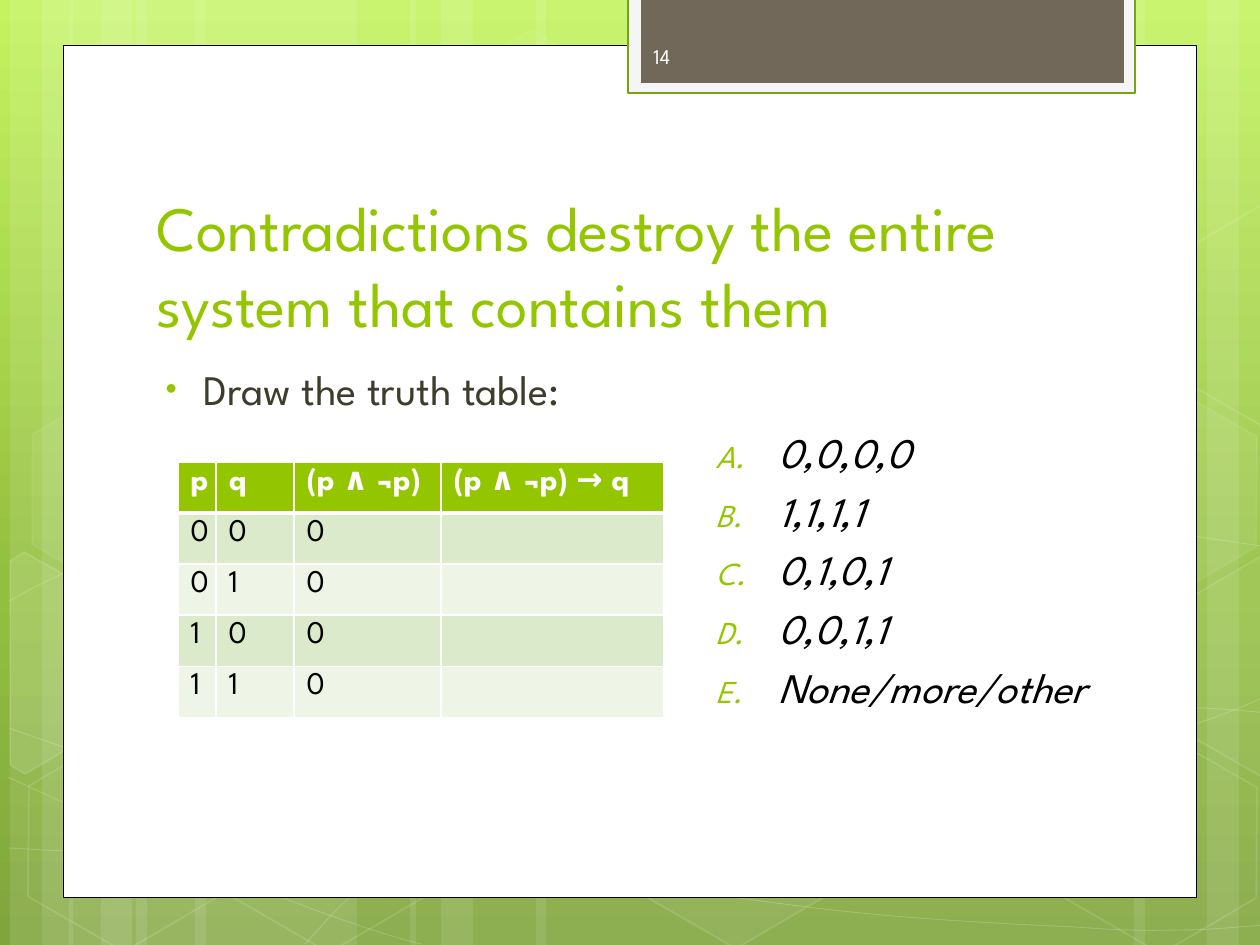
import copy
import math

import lxml.etree
import pptx
import pptx.dml.color
import pptx.enum.shapes
import pptx.enum.text
import pptx.oxml.ns
import pptx.util

PX = 914400 / 126
FONT = "League Spartan"
KIND = pptx.enum.shapes.MSO_SHAPE
ANCHOR = pptx.enum.text.MSO_ANCHOR
COLORS = {
    "white": "FFFFFF", "black": "000000", "green": "94C600", "edge": "74A510",
    "frame": "F5F5F5", "brown": "71685A", "ink": "3E3D2D", "number": "FEFEFE",
    "odd": "DCEACC", "even": "EEF5E7",
    "top": "C3F35F", "middle": "93BF3F", "base": "81A53E",
}

BANDS = [(136, 221), (10, 63), (42, 105), (195, 221), (69, 63), (101, 105),
         (924, 221), (1207, 63), (1134, 105), (536, 388), (410, 63), (441, 105)]

# Each curve is a start point, then two control points and an end per segment.
CURVES = [
    [(9, 848), (77, 852), (145, 856), (239, 854), (334, 853), (451, 851), (577, 838),
     (703, 825), (882, 801), (998, 777), (1113, 753), (1231, 716), (1269, 694)],
    [(9, 601), (45, 581), (82, 562), (152, 543), (224, 524), (326, 496), (437, 488),
     (549, 479), (685, 478), (824, 488), (963, 498), (1193, 537), (1269, 547)],
    [(8, 777), (160, 847), (311, 916), (421, 944)],
    [(9, 728), (48, 742), (88, 756), (161, 776), (234, 795), (344, 827), (450, 848),
     (554, 869), (687, 892), (791, 905), (896, 919), (1008, 924), (1075, 927),
     (1140, 932), (1158, 930), (1191, 930), (1223, 929), (1246, 926), (1269, 925)],
    [(305, 944), (328, 919), (350, 893), (381, 871), (411, 848), (454, 823), (489, 805),
     (524, 788), (546, 780), (592, 767), (638, 754), (722, 737), (766, 728),
     (811, 719), (818, 719), (857, 717), (896, 713), (958, 708), (1000, 708),
     (1045, 707), (1116, 708), (1116, 708), (1144, 708), (1173, 708), (1201, 708),
     (1223, 709), (1245, 711), (1268, 713)],
]

# Left, top, fill opacity and line opacity in percent.
HEXES = [(421, 45, 4, 8), (626, 742, 6, 12), (14, 745, 0, 12), (18, 393, 7, 8),
         (219, 746, 0, 12), (949, 571, 10, 12), (1051, 747, 0, 12), (1051, 396, 7, 8)]
TILT = 30
LEFT_CUT = [(10, 561), (24, 552), (121, 607), (120, 718), (25, 774), (10, 765)]
RIGHT_CUT = [(1167, 611), (1261, 556), (1271, 562), (1271, 772), (1263, 777), (1167, 722)]

HEADS = ["p", "q", "(p ∧ ¬p)", "(p ∧ ¬p) → q"]
ROWS = [[p, q, "0", ""] for p in "01" for q in "01"]
WIDTHS = [38, 78, 147, 223]
ANSWERS = ["0,0,0,0", "1,1,1,1", "0,1,0,1", "0,0,1,1", "None/more/other"]


def px(*sizes):
    return [pptx.util.Emu(round(size * PX)) for size in sizes]


def rgb(name):
    return pptx.dml.color.RGBColor.from_string(COLORS[name])


def node(parent, tag, **attrs):
    return lxml.etree.SubElement(parent, pptx.oxml.ns.qn("a:" + tag), attrs)


def fade(shape, part, alpha):
    """Set the opacity of a shape's solidFill or ln part, in percent."""
    host = shape.element.spPr.find(pptx.oxml.ns.qn("a:" + part))
    color = next(host.iter(pptx.oxml.ns.qn("a:srgbClr")))
    if alpha < 100:
        node(color, "alpha", val=str(alpha * 1000))


def paint(shape, fill=None, alpha=100, line=None, wide=1, sheer=100):
    shape.shadow.inherit = False
    if fill and alpha:
        shape.fill.solid()
        shape.fill.fore_color.rgb = rgb(fill)
        fade(shape, "solidFill", alpha)
    else:
        shape.fill.background()
    if line:
        shape.line.color.rgb = rgb(line)
        shape.line.width = pptx.util.Pt(wide)
        fade(shape, "ln", sheer)
    else:
        shape.line.fill.background()


def block(slide, kind, box, **look):
    shape = slide.shapes.add_shape(kind, *px(*box))
    paint(shape, **look)
    return shape


def outline(slide, points, closed, **look):
    start, *rest = [px(*point) for point in points]
    pen = slide.shapes.build_freeform(*start)
    pen.add_line_segments(rest, close=closed)
    shape = pen.convert_to_shape()
    paint(shape, **look)
    return shape


def bend(shape):
    """Turn every three straight segments into one cubic curve."""
    steps = list(shape.element.iter(pptx.oxml.ns.qn("a:lnTo")))
    for i in range(0, len(steps), 3):
        cubic = node(steps[i].getparent(), "cubicBezTo")
        for step in steps[i:i + 3]:
            cubic.append(step[0])
            step.getparent().remove(step)


def turn(points, mid):
    """Turn points back by the tilt, around a middle point."""
    cos, sin = math.cos(math.radians(TILT)), math.sin(math.radians(TILT))
    moved = [(x - mid[0], y - mid[1]) for x, y in points]
    return [(mid[0] + x * cos + y * sin, mid[1] - x * sin + y * cos) for x, y in moved]


def style(text, size, color, bold=False, italic=False):
    for para in text.paragraphs:
        for run in para.runs:
            run.font.name = FONT
            run.font.size = pptx.util.Pt(size)
            run.font.color.rgb = rgb(color)
            run.font.bold = bold
            run.font.italic = italic


def write(shape, box, words, size, color, anchor=ANCHOR.TOP, italic=False):
    shape.left, shape.top, shape.width, shape.height = px(*box)
    text = shape.text_frame
    text.text = words
    text.word_wrap = True
    text.auto_size = pptx.enum.text.MSO_AUTO_SIZE.NONE
    text.vertical_anchor = anchor
    for para in text.paragraphs:
        para.alignment = pptx.enum.text.PP_ALIGN.LEFT
    style(text, size, color, italic=italic)
    return text


def mark(text, left, hang, face, tag, **attrs):
    """Give each paragraph a green bullet or number with a hanging indent."""
    for para in text.paragraphs:
        para.space_before = pptx.util.Pt(4.8)
        props = para._p.get_or_add_pPr()
        props.set("marL", str(px(left)[0]))
        props.set("indent", str(px(-hang)[0]))
        node(node(props, "buClr"), "srgbClr", val=COLORS["green"])
        node(props, "buSzPct", val="76000")
        node(props, "buFont", typeface=face)
        node(props, tag, **attrs)


def backdrop(slide):
    fill = slide.background.fill
    fill.gradient()
    fill.gradient_angle = 270
    stops = next(slide.element.iter(pptx.oxml.ns.qn("a:gsLst")))
    stops.append(copy.deepcopy(stops[-1]))
    for stop, place, name in zip(fill.gradient_stops, (0, 0.62, 1), ("top", "middle", "base")):
        stop.position = place
        stop.color.rgb = rgb(name)
    for left, width in BANDS:
        block(slide, KIND.RECTANGLE, (left, 0, width, 945), fill="white", alpha=10)
    for knots in CURVES:
        bend(outline(slide, knots, False, line="white", wide=0.5, sheer=20))
    for left, top, alpha, sheer in HEXES:
        shape = block(slide, KIND.HEXAGON, (left, top, 220, 192), fill="white",
                      alpha=alpha, line="white", sheer=sheer)
        shape.adjustments[0] = 0.285
        shape.rotation = TILT
    upper = [(x, y - 351) for x, y in RIGHT_CUT]
    for points, mid, alpha in ((LEFT_CUT, (45, 674), 10), (RIGHT_CUT, (1241, 655), 4),
                               (upper, (1241, 304), 0)):
        shape = outline(slide, turn(points, mid), True, fill="white", alpha=alpha,
                        line="white", sheer=12)
        shape.rotation = TILT


def edge(cell, tag, wide):
    line = node(cell._tc.get_or_add_tcPr(), tag, w=str(pptx.util.Pt(wide)))
    node(node(line, "solidFill"), "srgbClr", val=COLORS["white"])


def truth(slide):
    """Add the truth table."""
    rows = [HEADS] + ROWS
    box = px(178, 462, sum(WIDTHS), 51 * len(rows))
    table = slide.shapes.add_table(len(rows), len(HEADS), *box).table
    for col, width in zip(table.columns, px(*WIDTHS)):
        col.width = width
    for r, row in enumerate(rows):
        table.rows[r].height = px(51)[0]
        for c, words in enumerate(row):
            cell = table.cell(r, c)
            for tag in ("lnL", "lnR", "lnT", "lnB"):
                edge(cell, tag, 3 if (r, tag) in ((0, "lnB"), (1, "lnT")) else 1)
            cell.fill.solid()
            cell.fill.fore_color.rgb = rgb(("odd" if r % 2 else "even") if r else "green")
            cell.text_frame.text = words
            style(cell.text_frame, 18, "black" if r else "white", bold=r == 0)


def main():
    deck = pptx.Presentation()
    deck.slide_width, deck.slide_height = px(1260, 945)
    slide = deck.slides.add_slide(deck.slide_layouts[3])
    title, body, choice = list(slide.placeholders)
    backdrop(slide)
    block(slide, KIND.RECTANGLE, (63, 45, 1134, 853), fill="white", line="black", wide=0.5)
    block(slide, KIND.RECTANGLE, (628, -3, 507, 96), fill="frame", line="edge", wide=1.25)
    block(slide, KIND.RECTANGLE, (641, -3, 483, 86), fill="brown")
    for shape in (title, body, choice):
        slide.shapes._spTree.append(shape.element)  # bring to the front
    write(title, (144, 188, 968, 158),
          "Contradictions destroy the entire system that contains them",
          36, "green", ANCHOR.BOTTOM)
    text = write(body, (144, 357, 934, 447), "Draw the truth table:", 24, "ink")
    mark(text, 47, 38, "Arial", "buChar", char="•")
    text = write(choice, (694, 420, 483, 325), "\n".join(ANSWERS), 24, "black", italic=True)
    mark(text, 72, 63, FONT, "buAutoNum", type="alphaUcPeriod")
    box = (641, 31, 184, 50)
    write(slide.shapes.add_textbox(*px(*box)), box, "14", 12, "number", ANCHOR.MIDDLE)
    truth(slide)
    deck.save("out.pptx")


if __name__ == "__main__":
    main()
